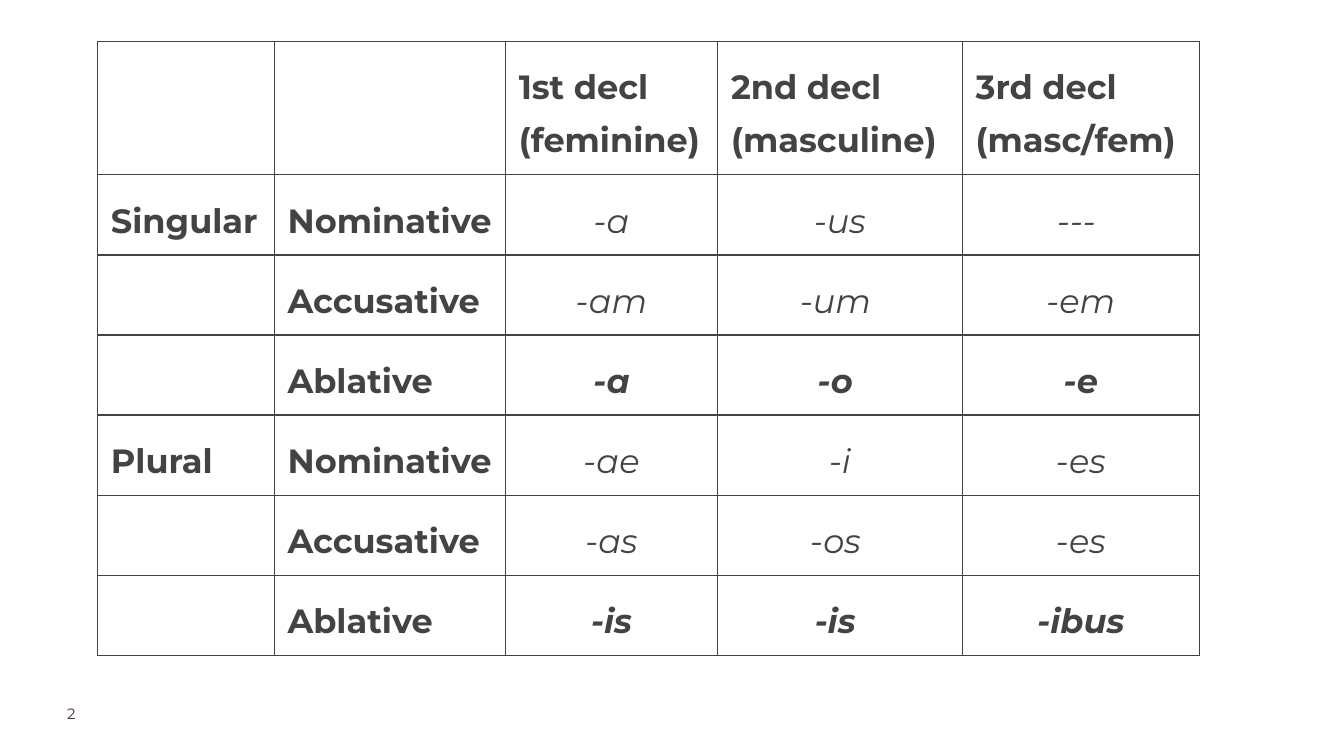
"""Build a slide with a table of Latin noun endings by case and declension."""
from lxml.etree import SubElement
from pptx import Presentation
from pptx.dml.color import RGBColor
from pptx.enum.text import MSO_ANCHOR, PP_ALIGN
from pptx.oxml.ns import qn
from pptx.util import Inches, Pt

HUES = {"ink": "434343", "page": "4B3241"}
FONT = "Montserrat"
COLS = [2.63, 3.44, 3.16, 3.64, 3.53]
ROWS = [1.76] + [1.06] * 6
CELLS = [
    ["", "", "1st decl\n(feminine)", "2nd decl\n(masculine)", "3rd decl\n(masc/fem)"],
    ["Singular", "Nominative", "-a", "-us", "--- "],
    ["", "Accusative", "-am", "-um ", "-em"],
    ["", "Ablative", "-a", "-o ", "-e"],
    ["Plural", "Nominative", "-ae", "-i", "-es"],
    ["", "Accusative", "-as", "-os ", "-es"],
    ["", "Ablative", "-is", "-is ", "-ibus"],
]


def add_run(para, text, size, hue, bold=False, slant=False):
    run = para.add_run()
    run.text = text
    font = run.font
    font.name, font.size = FONT, Pt(size)
    font.bold, font.italic = bold, slant
    font.color.rgb = RGBColor.from_string(HUES[hue])


def add_edges(cell):
    props = cell._tc.get_or_add_tcPr()
    for spot, side in enumerate(("lnL", "lnR", "lnT", "lnB")):
        line = props.makeelement(qn(f"a:{side}"), {"w": str(Pt(1.5))})
        fill = SubElement(line, qn("a:solidFill"))
        SubElement(fill, qn("a:srgbClr"), val=HUES["ink"])
        props.insert(spot, line)


deck = Presentation()
deck.slide_width, deck.slide_height = Inches(20), Inches(11.25)
slide = deck.slides.add_slide(deck.slide_layouts[6])

frame = slide.shapes.add_table(
    len(ROWS), len(COLS), Inches(1.45), Inches(0.62),
    Inches(sum(COLS)), Inches(sum(ROWS)))
table = frame.table
table.first_row = table.horz_banding = False
for col, width in zip(table.columns, COLS):
    col.width = Inches(width)
for row, height in zip(table.rows, ROWS):
    row.height = Inches(height)

for r, words in enumerate(CELLS):
    for c, text in enumerate(words):
        cell = table.cell(r, c)
        cell.fill.background()
        add_edges(cell)
        cell.margin_left = cell.margin_right = Inches(0.2)
        cell.margin_top = cell.margin_bottom = Inches(0.2)
        cell.vertical_anchor = MSO_ANCHOR.TOP
        if not text:
            continue
        ending = r > 0 and c > 1
        bold = not ending or words[1] == "Ablative"
        for n, part in enumerate(text.split("\n")):
            body = cell.text_frame
            para = body.add_paragraph() if n else body.paragraphs[0]
            para.alignment = PP_ALIGN.CENTER if ending else PP_ALIGN.LEFT
            para.line_spacing = 1.3
            add_run(para, part, 36, "ink", bold, ending)

box = slide.shapes.add_textbox(Inches(1), Inches(10.48), Inches(1.57), Inches(0.39))
page = box.text_frame
page.word_wrap = True
page.margin_left = page.margin_right = page.margin_top = page.margin_bottom = 0
add_run(page.paragraphs[0], "2", 16, "page")

deck.save("out.pptx")
